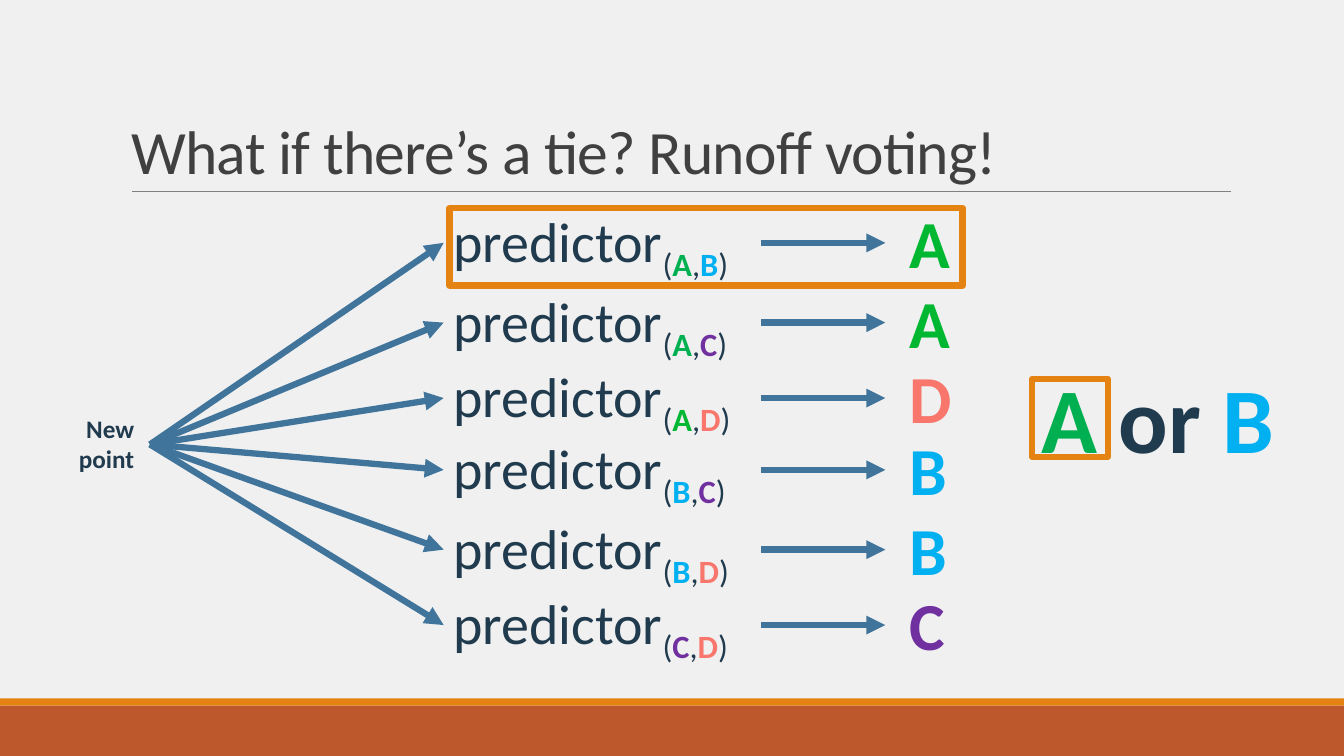
from lxml.etree import SubElement
from pptx import Presentation
from pptx.dml.color import RGBColor
from pptx.enum.shapes import MSO_CONNECTOR, MSO_SHAPE
from pptx.enum.text import MSO_ANCHOR, MSO_AUTO_SIZE, PP_ALIGN
from pptx.oxml.ns import qn
from pptx.util import Cm, Pt

HUES = {
    "A": "00B731", "A2": "00B050", "B": "00B0F0", "C": "7030A0", "D": "F8766C",
    "ink": "203A4E", "title": "404040", "arrow": "40749B", "rule": "808080",
    "gold": "E48312", "rust": "BD582C", "page": "F0F0F0",
}
VOTES = [("A2", "B", "A"), ("A2", "C", "A"), ("A", "D", "D"),
         ("B", "C", "B"), ("B", "D", "B"), ("C", "D", "C")]
STEPS = [0, 2.01, 3.91]
GROUP = 5.72


def hue(name):
    """Return the named colour."""
    return RGBColor.from_string(HUES[name])


def style(run, size, name, bold=False):
    """Format one run of text."""
    font = run.font
    font.name, font.size, font.bold = "Calibri", Pt(size), bold
    font.color.rgb = hue(name)


def write(slide, box, parts, size, wrap=True, align=PP_ALIGN.LEFT):
    """Add a text box of (text, colour, bold, baseline) parts."""
    frame = slide.shapes.add_textbox(*map(Cm, box)).text_frame
    frame.word_wrap = wrap
    frame.auto_size = MSO_AUTO_SIZE.SHAPE_TO_FIT_TEXT
    para = frame.paragraphs[0]
    para.alignment = align
    for text, name, bold, base in parts:
        run = para.add_run()
        run.text = text
        style(run, size, name, bold)
        if base:
            run.font._element.set("baseline", str(base * 1000))


def block(slide, box, fill=None, line=None):
    """Add a filled bar or an outlined frame."""
    shape = slide.shapes.add_shape(MSO_SHAPE.RECTANGLE, *map(Cm, box))
    shape.shadow.inherit = False
    if fill:
        shape.fill.solid()
        shape.fill.fore_color.rgb = hue(fill)
    else:
        shape.fill.background()
    if line:
        shape.line.color.rgb = hue(line)
        shape.line.width = Pt(4.5)
    else:
        shape.line.fill.background()


def link(slide, ends, name="arrow", width=4.5, head=True):
    """Draw a straight line, with an arrowhead if asked."""
    line = slide.shapes.add_connector(MSO_CONNECTOR.STRAIGHT, *map(Cm, ends))
    line.line.color.rgb = hue(name)
    line.line.width = Pt(width)
    if head:
        SubElement(line.line._get_or_add_ln(), qn("a:tailEnd"), type="triangle")
    SubElement(line._element.spPr, qn("a:effectLst"))


def header(slide, box):
    """Place the title and the rule below it."""
    left, top, width, height = box
    title = slide.shapes.title
    title.left, title.top, title.width, title.height = map(Cm, box)
    frame = title.text_frame
    frame.text = "What if there’s a tie? Runoff voting!"
    frame.vertical_anchor = MSO_ANCHOR.BOTTOM
    frame.word_wrap = True
    para = frame.paragraphs[0]
    para.alignment = PP_ALIGN.LEFT
    para.line_spacing = 0.85
    run = para.runs[0]
    style(run, 44, "title")
    run.font._element.set("spc", "-50")
    base = top + height
    link(slide, (left + 0.28, base, left + 27.96, base), "rule", 0.5, False)


def footer(slide, box):
    """Place the two bars at the foot of the page."""
    left, top, width, height = box
    block(slide, (left, top + 0.18, width, height - 0.18), "rust")
    block(slide, (left, top, width, 0.18), "gold")


def vote(slide, box, pair, win):
    """Place a predictor, its arrow and its vote."""
    left, mid, width, height = box
    one, two = pair
    parts = [("predictor", "ink", False, 0), ("(", "ink", False, -25),
             (one[0], one, True, -25), (",", "ink", False, -25),
             (two[0], two, True, -25), (")", "ink", False, -25)]
    write(slide, (left, mid - 1.04, 10.64, height), parts, 40)
    link(slide, (left + 8, mid, left + 11.13, mid))
    write(slide, (left + width - 1.75, mid - 1.17, 1.75, 2.31),
          [(win[0], win, True, 0)], 48)


def fan(slide, box):
    """Place the new point, its arrows and all the votes."""
    left, top, width, height = box
    hub = top + 5.08
    write(slide, (left, hub - 0.91, 3.15, 1.8),
          [("New point", "ink", True, 0)], 18, align=PP_ALIGN.RIGHT)
    col = left + 10.7
    for i, (one, two, win) in enumerate(VOTES):
        mid = top + i // 3 * GROUP + STEPS[i % 3]
        link(slide, (left + 3.3, hub, col, mid))
        vote(slide, (col, mid, width - 10.7, 1.96), (one, two), win)
    block(slide, (col + 0.15, top - 0.88, 12.93, 1.96), line="gold")


def runoff(slide, box):
    """Place the tied pair and frame the winner."""
    left, top, width, height = box
    write(slide, box, [("A", "A2", True, 0), (" or ", "ink", True, 0),
                       ("B", "B", True, 0)], 66, wrap=False)
    block(slide, (left, top + 0.58, 1.91, 1.96), line="gold")


def main():
    """Build and save the slide."""
    deck = Presentation()
    deck.slide_width, deck.slide_height = Cm(33.87), Cm(19.05)
    slide = deck.slides.add_slide(deck.slide_layouts[5])
    slide.background.fill.solid()
    slide.background.fill.fore_color.rgb = hue("page")
    footer(slide, (0, 17.6, 33.87, 1.45))
    header(slide, (3.05, 0.79, 27.94, 4.04))
    fan(slide, (0.48, 6.12, 23.95, 9.63))
    runoff(slide, (26.01, 8.97, 6.43, 3.07))
    deck.save("out.pptx")


if __name__ == "__main__":
    main()
